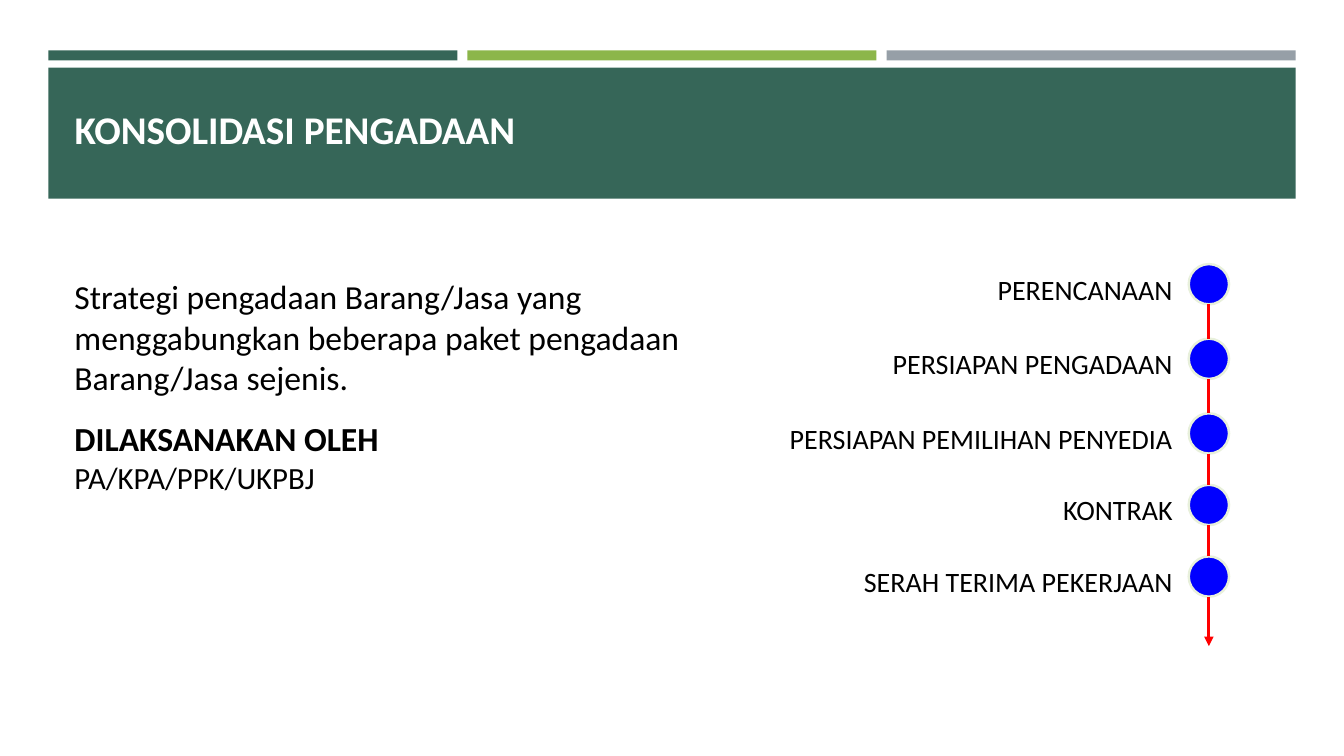
from lxml import etree
from pptx import Presentation
from pptx.dml.color import RGBColor
from pptx.enum import shapes, text
from pptx.oxml import ns
from pptx.util import Inches, Pt

COLOURS = {
    "green": "366658", "lime": "8CB64A", "grey": "969FA7",
    "white": "FFFFFF", "black": "000000",
    "blue": "0000FF", "rim": "E8F0DB", "red": "FF0000",
}
FONT = "Calibri"

# Label, width of the label, top of the dot within the timeline
STAGES = [
    ("PERENCANAAN", 2.22, 0),
    ("PERSIAPAN PENGADAAN", 3.33, 0.74),
    ("PERSIAPAN PEMILIHAN PENYEDIA", 4.4, 1.48),
    ("KONTRAK", 1.51, 2.19),
    ("SERAH TERIMA PEKERJAAN", 3.55, 2.9),
]


def colour(name):
    return RGBColor.from_string(COLOURS[name])


def add_span(para, words, size, tint="black", bold=False):
    span = para.add_run()
    span.text = words
    span.font.name = FONT
    span.font.size = Pt(size)
    span.font.bold = bold
    span.font.color.rgb = colour(tint)


def add_filled(page, kind, left, top, width, height, fill):
    shape = page.shapes.add_shape(
        kind, Inches(left), Inches(top), Inches(width), Inches(height))
    shape.shadow.inherit = False
    shape.fill.solid()
    shape.fill.fore_color.rgb = colour(fill)
    shape.line.fill.background()
    return shape


def add_text(page, left, top, width, height, wrap=False):
    box = page.shapes.add_textbox(
        Inches(left), Inches(top), Inches(width), Inches(height))
    box.text_frame.word_wrap = wrap
    box.text_frame.auto_size = text.MSO_AUTO_SIZE.SHAPE_TO_FIT_TEXT
    return box.text_frame.paragraphs[0]


def add_link(page, x, top, bottom, arrow=False):
    link = page.shapes.add_connector(
        shapes.MSO_CONNECTOR.STRAIGHT,
        Inches(x), Inches(top), Inches(x), Inches(bottom))
    link.line.color.rgb = colour("red")
    link.line.width = Pt(2.25)
    if arrow:
        etree.SubElement(link.line._get_or_add_ln(), ns.qn("a:tailEnd"),
                         type="triangle")
    etree.SubElement(link._element.spPr, ns.qn("a:effectLst"))


def add_header(page, left, top, width):
    # Three strips above the title band
    gap = 0.1
    strip = (width - 2 * gap) / 3
    for index, fill in enumerate(("green", "lime", "grey")):
        add_filled(page, shapes.MSO_SHAPE.RECTANGLE,
                   left + index * (strip + gap), top, strip, 0.1, fill)
    band = add_filled(page, shapes.MSO_SHAPE.RECTANGLE,
                      left, top + 0.17, width, 1.3, "green")

    # Title in front of the band
    title = page.shapes.title
    band._element.addnext(title._element)
    title.left, title.top = Inches(left + 0.16), Inches(top + 0.27)
    title.width, title.height = Inches(12.06), Inches(0.79)
    frame = title.text_frame
    frame.word_wrap = True
    frame.auto_size = text.MSO_AUTO_SIZE.NONE
    frame.vertical_anchor = text.MSO_ANCHOR.BOTTOM
    para = frame.paragraphs[0]
    para.alignment = text.PP_ALIGN.LEFT
    add_span(para, "KONSOLIDASI PENGADAAN", 28, "white", True)


def add_description(page, left, top, width):
    para = add_text(page, left, top, width, 1.31, wrap=True)
    add_span(para, "Strategi pengadaan Barang/Jasa yang menggabungkan "
                   "beberapa paket pengadaan Barang/Jasa sejenis.", 24)

    para = add_text(page, left, top + 1.41, 4.19, 0.91)
    add_span(para, "DILAKSANAKAN OLEH", 24, bold=True)
    para.add_line_break()
    add_span(para, "PA/KPA/PPK/UKPBJ", 22)


def add_timeline(page, right, top, height):
    size = 0.4
    dot_left = right - size
    label_right = dot_left - 0.06

    # Dots and their labels
    for label, width, offset in STAGES:
        dot = add_filled(page, shapes.MSO_SHAPE.OVAL,
                         dot_left, top + offset, size, size, "blue")
        dot.line.color.rgb = colour("rim")
        dot.line.width = Pt(1.75)
        para = add_text(page, label_right - width, top + offset + 0.03,
                        width, 0.44)
        para.alignment = text.PP_ALIGN.RIGHT
        add_span(para, label, 20)

    # Links from each dot to the next, the last one with an arrowhead
    starts = [offset for _, _, offset in STAGES]
    ends = starts[1:] + [height]
    for start, end in zip(starts, ends):
        add_link(page, dot_left + size / 2, top + start + size, top + end,
                 arrow=end == height)


def main():
    deck = Presentation()
    deck.slide_width, deck.slide_height = Inches(13.33), Inches(7.5)
    page = deck.slides.add_slide(deck.slide_layouts.get_by_name("Title Only"))
    add_header(page, left=0.48, top=0.5, width=12.37)
    add_description(page, left=0.64, top=2.69, width=6.29)
    add_timeline(page, right=12.19, top=2.62, height=3.79)
    deck.save("out.pptx")


if __name__ == "__main__":
    main()
